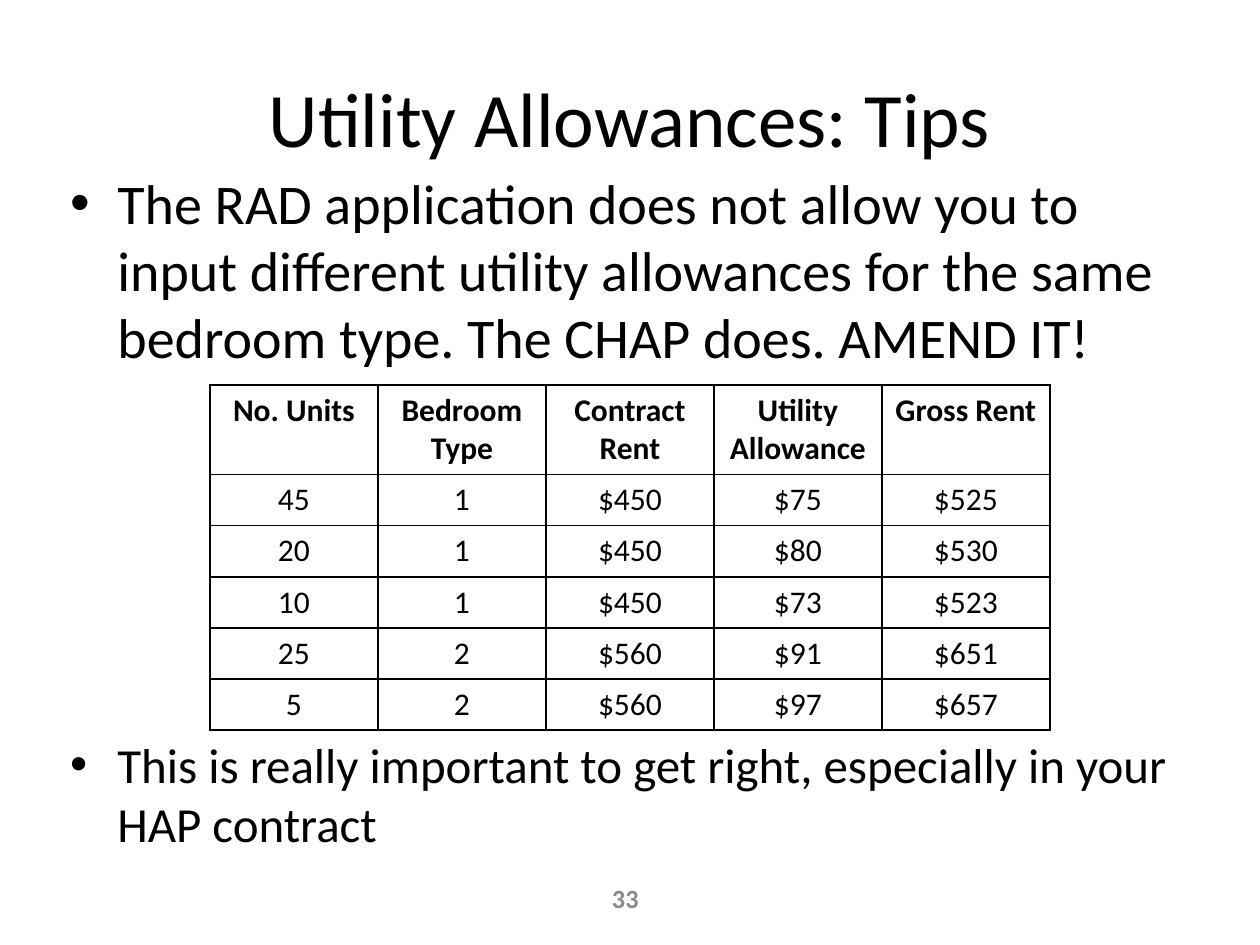
from lxml.etree import SubElement
from pptx import Presentation
from pptx.dml.color import RGBColor
from pptx.enum.text import MSO_ANCHOR, PP_ALIGN
from pptx.oxml.ns import qn
from pptx.util import Pt

COLORS = {"text": "000000", "border": "000000", "page": "898989"}
FONT = "Calibri"
HEADERS = ["No. Units", "Bedroom Type", "Contract Rent", "Utility Allowance", "Gross Rent"]
RENTS = [
    ["45", "1", "$450", "$75", "$525"],
    ["20", "1", "$450", "$80", "$530"],
    ["10", "1", "$450", "$73", "$523"],
    ["25", "2", "$560", "$91", "$651"],
    ["5", "2", "$560", "$97", "$657"],
]


def write(frame, text, size, color="text", bold=False, align=PP_ALIGN.LEFT, bullet=False):
    paragraph = frame.paragraphs[0]
    paragraph.alignment = align
    if bullet:
        properties = paragraph._p.get_or_add_pPr()
        properties.set("marL", str(Pt(27)))
        properties.set("indent", str(-Pt(27)))
        SubElement(properties, qn("a:buFont"), typeface="Arial")
        SubElement(properties, qn("a:buChar"), char="•")
    run = paragraph.add_run()
    run.text = text
    run.font.name = FONT
    run.font.size = Pt(size)
    run.font.bold = bold
    run.font.color.rgb = RGBColor.from_string(COLORS[color])


def add_text(slide, box, text, size, anchor=MSO_ANCHOR.TOP, **text_format):
    shape = slide.shapes.add_textbox(*map(Pt, box))
    shape.text_frame.word_wrap = True
    shape.text_frame.vertical_anchor = anchor
    write(shape.text_frame, text, size, **text_format)


def add_borders(cell):
    properties = cell._tc.get_or_add_tcPr()
    for position, side in enumerate(("a:lnL", "a:lnR", "a:lnT", "a:lnB")):
        line = properties.makeelement(qn(side), {"w": str(Pt(1))})
        fill = SubElement(line, qn("a:solidFill"))
        SubElement(fill, qn("a:srgbClr"), val=COLORS["border"])
        properties.insert(position, line)


def add_rent_table(slide, box, header_height):
    left, top, width, height = box
    rows = [HEADERS] + RENTS
    frame = slide.shapes.add_table(len(rows), len(HEADERS), *map(Pt, box))
    table = frame.table
    table.first_row = False
    table.horz_banding = False
    for column in table.columns:
        column.width = Pt(width / len(HEADERS))
    for row_index, values in enumerate(rows):
        is_header = row_index == 0
        row_height = header_height if is_header else (height - header_height) / len(RENTS)
        table.rows[row_index].height = Pt(row_height)
        for column_index, value in enumerate(values):
            cell = table.cell(row_index, column_index)
            cell.fill.background()
            add_borders(cell)
            write(cell.text_frame, value, 18, bold=is_header, align=PP_ALIGN.CENTER)


def add_tips_slide(presentation):
    slide = presentation.slides.add_slide(presentation.slide_layouts[6])
    add_text(slide, (36, 21.6, 648, 90), "Utility Allowances: Tips", 44,
             anchor=MSO_ANCHOR.MIDDLE, align=PP_ALIGN.CENTER)
    add_text(slide, (33, 92.5, 648, 125),
             "The RAD application does not allow you to input different utility allowances "
             "for the same bedroom type. The CHAP does. AMEND IT!", 32, bullet=True)
    add_rent_table(slide, (120, 220, 480, 197.2), header_height=51.2)
    add_text(slide, (33, 416, 648, 76),
             "This is really important to get right, especially in your HAP contract",
             28, bullet=True)
    add_text(slide, (342, 498.5, 30, 29), "33", 15, anchor=MSO_ANCHOR.MIDDLE,
             color="page", bold=True, align=PP_ALIGN.RIGHT)


def main():
    presentation = Presentation()
    presentation.slide_width = Pt(720)
    presentation.slide_height = Pt(540)
    add_tips_slide(presentation)
    presentation.save("out.pptx")


if __name__ == "__main__":
    main()
